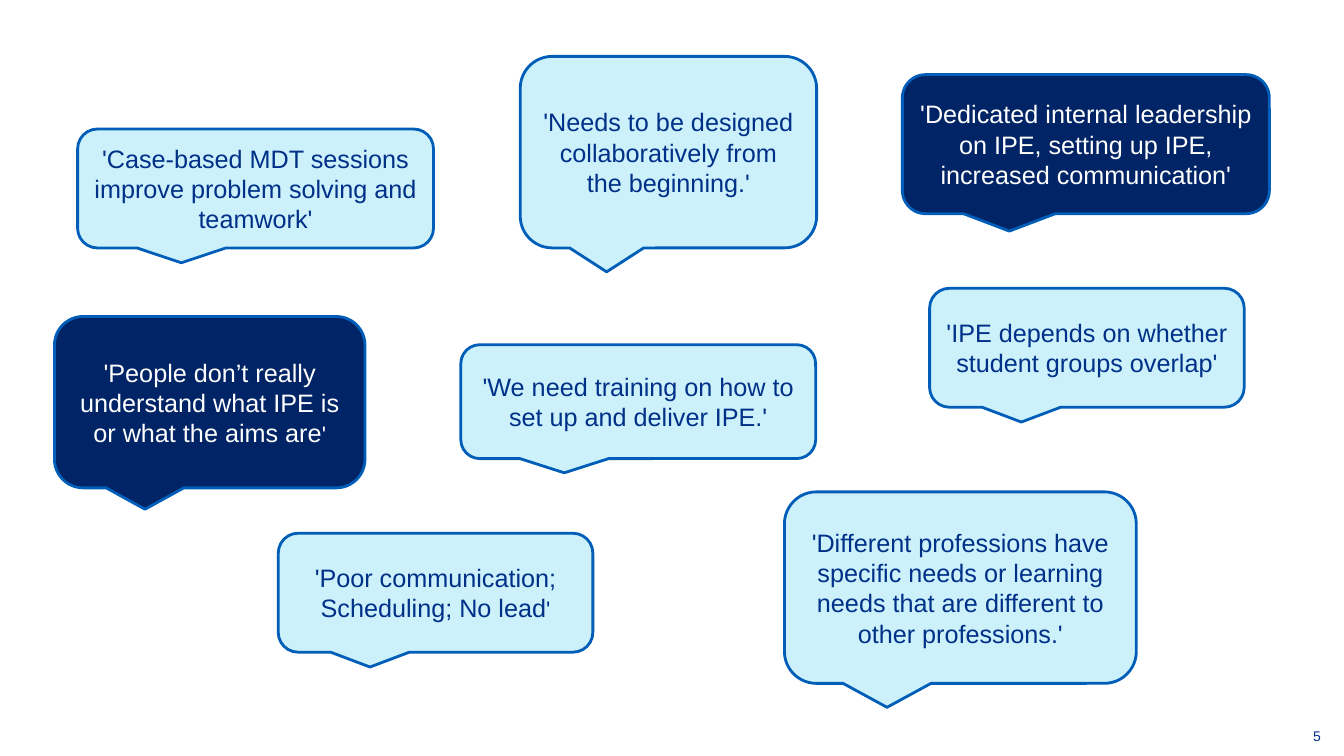
from pptx import Presentation
from pptx.dml.color import RGBColor
from pptx.enum.shapes import MSO_SHAPE
from pptx.enum.text import MSO_ANCHOR, PP_ALIGN
from pptx.util import Inches, Pt

COLORS = {
    "navy": "002465",
    "blue": "003087",
    "outline": "005EB8",
    "pale": "CCF1FB",
    "white": "FFFFFF",
}

# Fill and text colour of each kind of bubble
BUBBLE_STYLES = {"light": ("pale", "blue"), "dark": ("navy", "white")}

# Style, left, top, width, height, quote, size of the closing mark
QUOTES = [
    ("light", 0.77, 1.28, 3.53, 1.18,
     "'Case-based MDT sessions improve problem solving and teamwork", 18),
    ("dark", 8.95, 0.74, 3.64, 1.38,
     "'Dedicated internal leadership on IPE, setting up IPE, increased communication", 18),
    ("light", 4.57, 3.42, 3.52, 1.13,
     "'We need training on how to set up and deliver IPE.", 18),
    ("light", 5.16, 0.56, 2.94, 1.9,
     "'Needs to be designed collaboratively from the beginning.", 18),
    ("dark", 0.54, 3.14, 3.08, 1.7,
     "'People don’t really understand what IPE is or what the aims are", 16),
    ("light", 9.22, 2.86, 3.12, 1.18,
     "'IPE depends on whether student groups overlap", 18),
    ("light", 7.78, 4.88, 3.49, 1.9,
     "'Different professions have specific needs or learning needs "
     "that are different to other professions.", 18),
    ("light", 2.76, 5.29, 3.12, 1.18,
     "'Poor communication; Scheduling; No lead", 16),
]


def color(name):
    return RGBColor.from_string(COLORS[name])


class SlideBuilder:
    """Holds the font and the current slide, and adds elements to it."""

    def __init__(self, slide, font_name="Arial"):
        self.slide = slide
        self.font_name = font_name

    def add_run(self, paragraph, text, size, color_name):
        run = paragraph.add_run()
        run.text = text
        font_format = {"name": self.font_name, "size": Pt(size)}
        for attribute, value in font_format.items():
            setattr(run.font, attribute, value)
        run.font.color.rgb = color(color_name)

    def add_bubble(self, style, left, top, width, height, quote, closing_size):
        fill_name, text_name = BUBBLE_STYLES[style]
        shape = self.slide.shapes.add_shape(
            MSO_SHAPE.ROUNDED_RECTANGULAR_CALLOUT,
            Inches(left), Inches(top), Inches(width), Inches(height))
        shape.shadow.inherit = False
        shape.fill.solid()
        shape.fill.fore_color.rgb = color(fill_name)
        shape.line.color.rgb = color("outline")
        shape.line.width = Pt(2)
        frame_format = {"word_wrap": True, "vertical_anchor": MSO_ANCHOR.MIDDLE}
        for attribute, value in frame_format.items():
            setattr(shape.text_frame, attribute, value)
        paragraph = shape.text_frame.paragraphs[0]
        paragraph.alignment = PP_ALIGN.CENTER
        if closing_size == 18:
            self.add_run(paragraph, quote + "'", 18, text_name)
        else:
            self.add_run(paragraph, quote, 18, text_name)
            self.add_run(paragraph, "'", closing_size, text_name)

    def add_page_number(self, text, left, top, width, height):
        shape = self.slide.shapes.add_textbox(
            Inches(left), Inches(top), Inches(width), Inches(height))
        frame_format = {"word_wrap": True, "vertical_anchor": MSO_ANCHOR.MIDDLE}
        for attribute, value in frame_format.items():
            setattr(shape.text_frame, attribute, value)
        paragraph = shape.text_frame.paragraphs[0]
        paragraph.alignment = PP_ALIGN.RIGHT
        self.add_run(paragraph, text, 10, "blue")


def main():
    presentation = Presentation()
    presentation.slide_width = Inches(13.33)
    presentation.slide_height = Inches(7.5)
    blank_layout = presentation.slide_layouts[6]
    builder = SlideBuilder(presentation.slides.add_slide(blank_layout))

    # Page number
    builder.add_page_number("5", 12.67, 7.1, 0.53, 0.4)

    # Speech bubbles
    for quote in QUOTES:
        builder.add_bubble(*quote)

    presentation.save("out.pptx")


if __name__ == "__main__":
    main()
